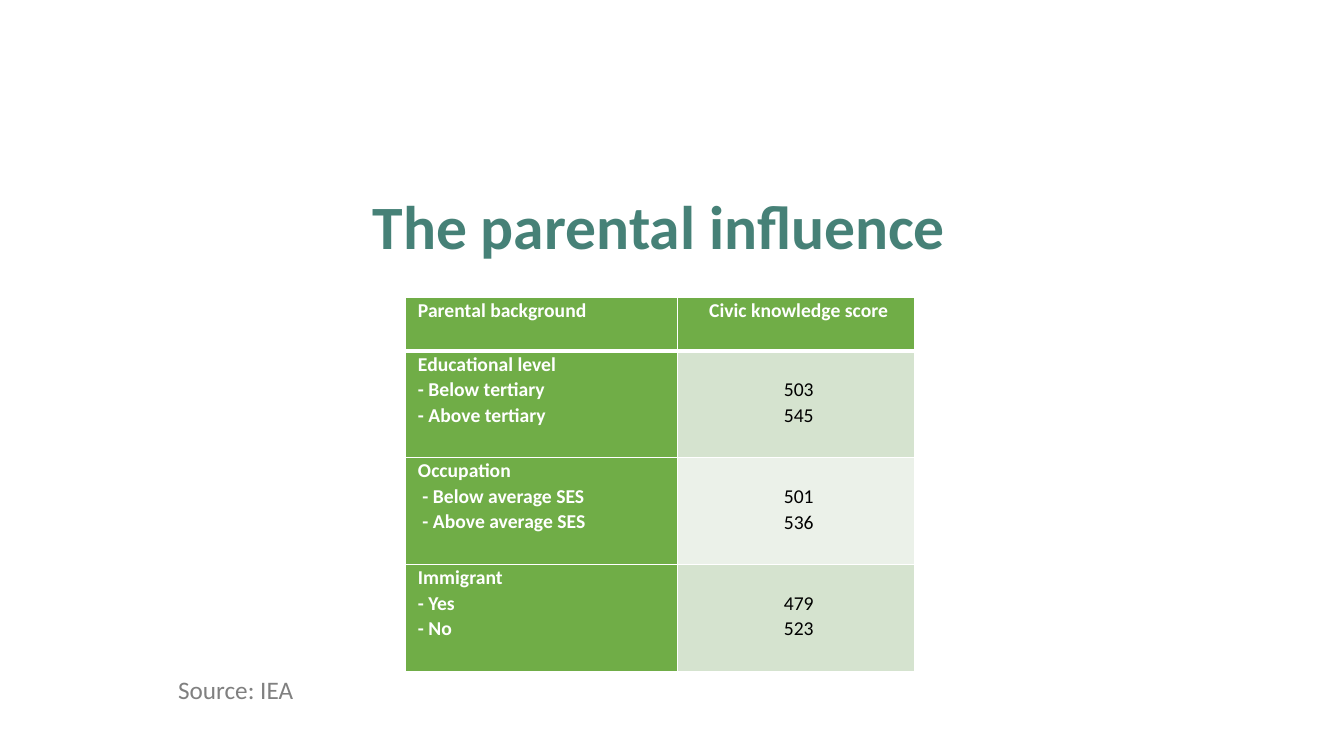
"""Build a slide with a table of civic knowledge by parental background."""
from lxml import etree
from pptx import Presentation
from pptx.dml.color import RGBColor
from pptx.enum import text as t
from pptx.oxml import ns
from pptx.util import Pt

TITLE = "The parental influence"
SOURCE = "Source: IEA"
HEADS = ("Parental background", "Civic knowledge score")
GROUPS = [
    ("Educational level", ["- Below tertiary", "- Above tertiary"], [503, 545], 0),
    ("Occupation", ["- Below average SES", "- Above average SES"], [501, 536], 3.2),
    ("Immigrant", ["- Yes", "- No"], [479, 523], 0),
]
THEME = dict(font="Calibri", title="468177", note="808080", head="70AD47",
             bands=("D5E3CF", "EBF1E9"), light="FFFFFF", dark="000000",
             big=44, small=18, cell=14)
COLS = (194.4, 169.2)
HEAD, BODY = 38.2, 76.3
LEFT, TOP = 289.4, 212.4
INDENT, SIDE, LINE = 4.3, 4.9, 18.3


def style(par, size, color, bold=False, align=t.PP_ALIGN.LEFT, lines=0.9):
    par.alignment, par.line_spacing = align, lines
    font = par.font
    font.name, font.size, font.bold = THEME["font"], Pt(size), bold
    font.color.rgb = RGBColor.from_string(color)


def label(slide, words, box, size, color, anchor, **look):
    shape = slide.shapes.add_textbox(*map(Pt, box))
    frame = shape.text_frame
    frame.word_wrap, frame.vertical_anchor = True, anchor
    frame.text = words
    style(frame.paragraphs[0], size, color, **look)


def border(cell, low):
    props = cell._tc.get_or_add_tcPr()
    for side in "LRTB":
        width = low if side == "B" else 1
        line = etree.SubElement(props, ns.qn(f"a:ln{side}"), w=str(Pt(width)))
        fill = etree.SubElement(line, ns.qn("a:solidFill"))
        etree.SubElement(fill, ns.qn("a:srgbClr"), val=THEME["light"])


def write(cell, lines, fill, color, bold, align, top=0, low=1, extra=0):
    border(cell, low)
    cell.fill.solid()
    cell.fill.fore_color.rgb = RGBColor.from_string(fill)
    cell.margin_left = cell.margin_right = Pt(SIDE)
    cell.margin_top, cell.margin_bottom = Pt(top), 0
    cell.text = "\n".join(map(str, lines))
    for n, par in enumerate(cell.text_frame.paragraphs):
        props = par._p.get_or_add_pPr()
        props.set("marL", str(Pt(INDENT + (extra if n else 0))))
        props.set("indent", "0")
        style(par, THEME["cell"], color, bold, align, 1.07)


def grid(slide):
    high = HEAD + BODY * len(GROUPS)
    box = (LEFT, TOP, sum(COLS), high)
    table = slide.shapes.add_table(len(GROUPS) + 1, len(COLS), *map(Pt, box)).table
    for col, wide in zip(table.columns, COLS):
        col.width = Pt(wide)
    for n, row in enumerate(table.rows):
        row.height = Pt(BODY if n else HEAD)
    sides = (t.PP_ALIGN.JUSTIFY, t.PP_ALIGN.CENTER)
    head, light = THEME["head"], THEME["light"]
    for n, (words, align) in enumerate(zip(HEADS, sides)):
        write(table.cell(0, n), [words], head, light, True, align, low=3)
    for n, (name, kinds, scores, extra) in enumerate(GROUPS):
        write(table.cell(n + 1, 0), [name, *kinds], head, light, True,
              sides[0], extra=extra)
        write(table.cell(n + 1, 1), scores, THEME["bands"][n % 2],
              THEME["dark"], False, sides[1], top=LINE)


def main():
    deck = Presentation()
    deck.slide_width, deck.slide_height = Pt(960), Pt(540)
    slide = deck.slides.add_slide(deck.slide_layouts[6])
    label(slide, TITLE, (110.9, 105.1, 720, 86.4), THEME["big"], THEME["title"],
          t.MSO_ANCHOR.BOTTOM, bold=True, align=t.PP_ALIGN.CENTER)
    grid(slide)
    label(slide, SOURCE, (120.2, 480.2, 720, 32.4), THEME["small"],
          THEME["note"], t.MSO_ANCHOR.TOP)
    deck.save("out.pptx")


if __name__ == "__main__":
    main()
